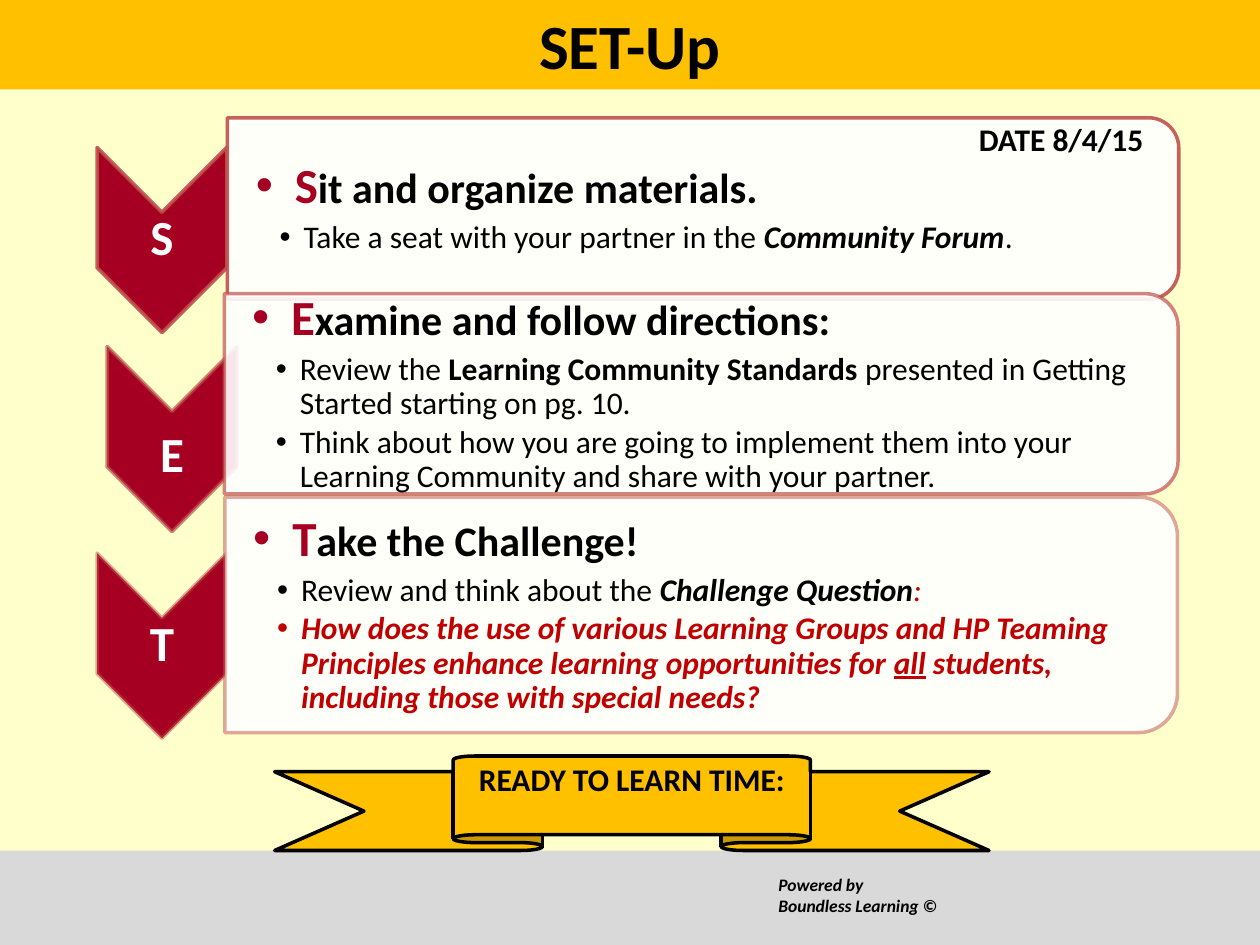
from lxml.etree import SubElement
from pptx import Presentation
from pptx.dml.color import RGBColor
from pptx.enum.shapes import MSO_SHAPE
from pptx.enum.text import MSO_ANCHOR, PP_ALIGN
from pptx.oxml.ns import qn
from pptx.util import Inches, Pt

CRIMSON, RED, GOLD, GRAY = "A50021", "C00000", "FFC000", "D9D9D9"
OUTLINE, WHITE, BLACK = "C0504D", "FFFFFF", "000000"


def paint(fill, color, opacity=100):
    fill.solid()
    fill.fore_color.rgb = RGBColor.from_string(color)
    if opacity < 100:
        color_node = fill._xPr.find(qn("a:solidFill"))[0]
        SubElement(color_node, qn("a:alpha"), val=str(opacity * 1000))


def write(paragraph, text, size=18, color=BLACK, bold=True, italic=False,
          underline=False, align=PP_ALIGN.LEFT):
    paragraph.alignment = align
    run = paragraph.add_run()
    run.text = text
    font = run.font
    font.name, font.size = "Calibri", Pt(size)
    font.bold, font.italic, font.underline = bold, italic, underline
    paint(font.fill, color)


deck = Presentation()
deck.slide_width, deck.slide_height = Inches(10), Inches(7.5)
slide = deck.slides.add_slide(deck.slide_layouts[6])
shapes = slide.shapes
paint(slide.background.fill, "FFFFCC")

# Footer band and title band
for top, height, color in ((6.75, 0.75, GRAY), (0, 0.71, GOLD)):
    band = shapes.add_shape(MSO_SHAPE.RECTANGLE, 0, Inches(top), Inches(10), Inches(height))
    band.shadow.inherit = False
    paint(band.fill, color)
    band.line.fill.background()
title = band.text_frame
title.vertical_anchor = MSO_ANCHOR.MIDDLE
write(title.paragraphs[0], "SET-Up", size=36, align=PP_ALIGN.CENTER)

# Each step: letter, chevron left and top, letter offset, panel box, text box,
# outline opacity, heading, detail paragraphs made of runs
plain, strong_italic = {"bold": False}, {"italic": True}
challenge = {"color": RED, "italic": True}
steps = [
    ("S", 0.55, 1.39, 0.29, (4.86, -2.12, 1.44, 7.55), (1.81, 1, 7.48, 1.3), 90,
     "it and organize materials.",
     [[("Take a seat with your partner in the ", plain),
       ("Community Forum", strong_italic), (".", plain)]]),
    ("E", 0.63, 2.97, 0.43, (4.77, -0.66, 1.59, 7.57), (1.78, 2.41, 7.49, 1.43), 70,
     "xamine and follow directions:",
     [[("Review the ", plain), ("Learning Community Standards ", {}),
       ("presented in Getting Started starting on pg. 10.", plain)],
      [("Think about how you are going to implement them into your Learning "
        "Community and share with your partner.", plain)]]),
    ("T", 0.55, 4.61, 0.29, (4.63, 1.1, 1.87, 7.56), (1.79, 4.03, 7.47, 1.69), 50,
     "ake the Challenge!",
     [[("Review and think about the ", plain), ("Challenge Question", strong_italic),
       (":", {"color": RED, "bold": False, "italic": True})],
      [("How does the use of various Learning Groups and HP Teaming Principles "
        "enhance learning opportunities for ", challenge),
       ("all", {**challenge, "underline": True}),
       (" students, including those with special needs?", challenge)]]),
]

for letter, left, top, offset, panel_box, text_box, opacity, heading, details in steps:
    # Chevron and panel, both turned a quarter
    for preset, box, color, fill_opacity in (
            (MSO_SHAPE.CHEVRON, (left, top, 1.47, 1.03), CRIMSON, 100),
            (MSO_SHAPE.ROUND_2_SAME_RECTANGLE, panel_box, WHITE, 90)):
        turned = shapes.add_shape(preset, *map(Inches, box))
        turned.rotation = 90
        turned.shadow.inherit = False
        paint(turned.fill, color, fill_opacity)
        paint(turned.line.fill, OUTLINE, opacity)
        turned.line.width = Pt(2)

    # Letter and body text frames
    frames = []
    for box, inset in (((left + 0.22, top + offset, 1.03, 0.44), 0.02), (text_box, 0.22)):
        frame = shapes.add_textbox(*map(Inches, box)).text_frame
        frame.word_wrap = True
        frame.vertical_anchor = MSO_ANCHOR.MIDDLE
        frame.margin_left = Inches(inset)
        frame.margin_top = frame.margin_right = frame.margin_bottom = Inches(0.02)
        frames.append(frame)
    badge, body = frames
    badge.paragraphs[0].line_spacing = 0.9
    write(badge.paragraphs[0], letter, size=28, color=WHITE, align=PP_ALIGN.CENTER)

    # Bulleted heading with its details
    heading_runs = [(letter, {"size": 28, "color": CRIMSON}), (heading, {"size": 24})]
    for index, runs in enumerate([heading_runs, *details]):
        paragraph = body.add_paragraph() if index else body.paragraphs[0]
        paragraph.level = 2 if index else 1
        paragraph.line_spacing = 0.9
        paragraph.space_before = Pt(0)
        paragraph.space_after = Pt(2.7 if index else 4.2)
        margin, hanging = (0.38, 0.19) if index else (0.31, 0.31)
        properties = paragraph._p.get_or_add_pPr()
        properties.set("marL", str(Inches(margin)))
        properties.set("indent", str(-Inches(hanging)))
        SubElement(properties, qn("a:buFont"), typeface="Arial")
        SubElement(properties, qn("a:buChar"), char="•")
        for text, style in runs:
            write(paragraph, text, **style)

# Ribbon
ribbon = shapes.add_shape(MSO_SHAPE.UP_RIBBON, Inches(2.18), Inches(6), Inches(5.67), Inches(0.75))
ribbon.shadow.inherit = False
paint(ribbon.fill, GOLD)
paint(ribbon.line.fill, BLACK)
ribbon.line.width = Pt(2)
ribbon.text_frame.vertical_anchor = MSO_ANCHOR.TOP
ribbon.text_frame.margin_top = Inches(0.03)
write(ribbon.text_frame.paragraphs[0], "READY TO LEARN TIME:", align=PP_ALIGN.CENTER)

# Date
date = shapes.add_textbox(Inches(7.67), Inches(0.9), Inches(1.67), Inches(0.4)).text_frame
date.word_wrap = True
write(date.paragraphs[0], "DATE 8/4/15")

# Credit line
credit = shapes.add_shape(MSO_SHAPE.RECTANGLE, Inches(6.08), Inches(6.89), Inches(1.5), Inches(0.61))
credit.shadow.inherit = False
paint(credit.fill, GRAY)
credit.line.fill.background()
credit.text_frame.vertical_anchor = MSO_ANCHOR.TOP
write(credit.text_frame.paragraphs[0], "Powered by", size=10, italic=True)
write(credit.text_frame.add_paragraph(), "Boundless Learning ©", size=10, italic=True)

deck.save("out.pptx")
